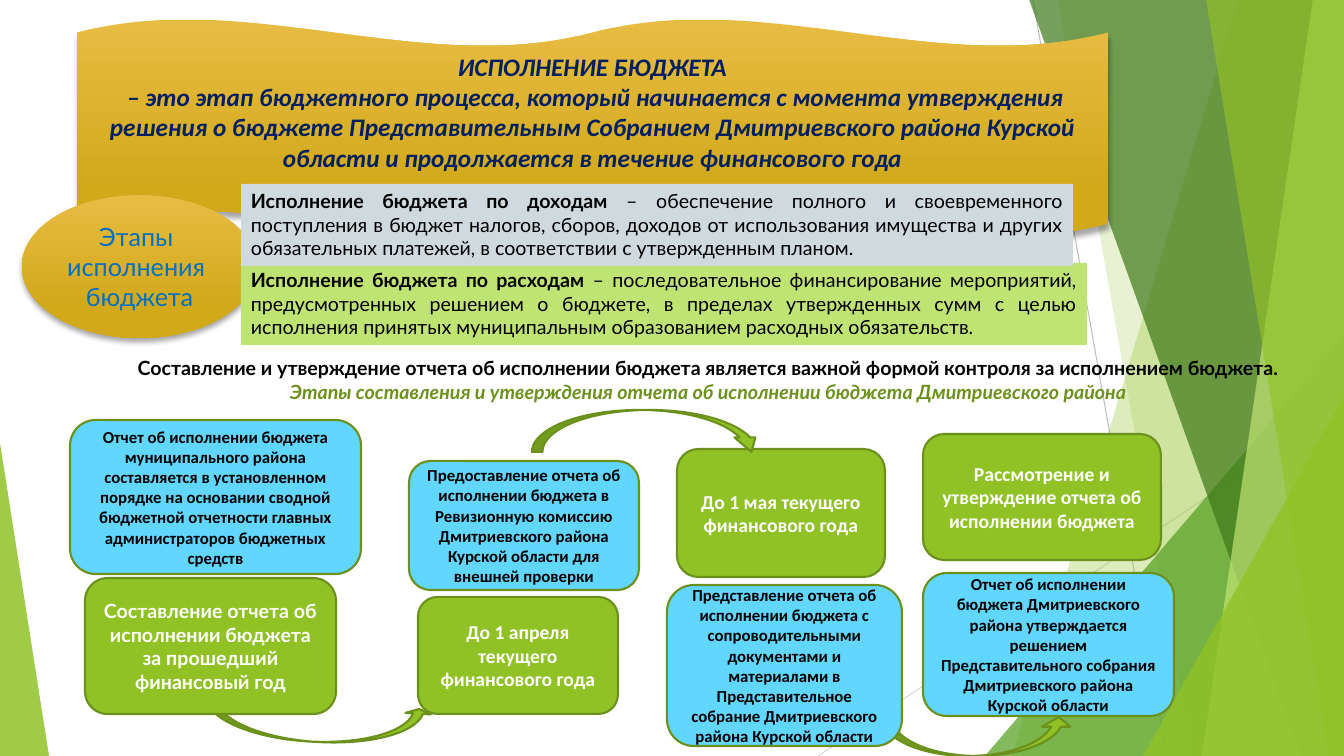
from lxml import etree
from pptx import Presentation, util as u
from pptx.dml.color import RGBColor
from pptx.enum import shapes, text
from pptx.oxml.ns import qn

PX = 9071.43  # EMU per px: 1344 px across 13.33 inches
W, H = 1344, 756
THEME = {
    "green": "90C226", "forest": "54A021", "dark": "3F7819", "lime": "C0E474",
    "edge": "6B901C", "sky": "61D6FF", "mist": "CFDADF", "gold": "E7BC43",
    "ochre": "D2A91B", "navy": "002060", "blue": "0070C0", "olive": "6C921D",
    "black": "000000", "white": "FFFFFF", "grey": "BFBFBF", "pale": "D9D9D9",
    "title": 18, "body": 14, "note": 12,
}
MSO = shapes.MSO_SHAPE
CENTER, JUSTIFY = text.PP_ALIGN.CENTER, text.PP_ALIGN.JUSTIFY
TOP, MIDDLE = text.MSO_ANCHOR.TOP, text.MSO_ANCHOR.MIDDLE


def style(sp, fill, line=None, alpha=100):
    """Plain or gold gradient fill, optional outline, opacity in percent."""
    sp.shadow.inherit = False
    if fill == "gold":
        sp.fill.gradient()
        sp.fill.gradient_angle = 270
        for stop, pos, color in zip(sp.fill.gradient_stops, (0, 0.78), ("gold", "ochre")):
            stop.position = pos
            stop.color.rgb = RGBColor.from_string(THEME[color])
    else:
        sp.fill.solid()
        sp.fill.fore_color.rgb = RGBColor.from_string(THEME[fill])
    if alpha < 100:
        clr = sp._element.spPr.find(qn("a:solidFill"))[0]
        etree.SubElement(clr, qn("a:alpha"), val=str(alpha * 1000))
    if line:
        sp.line.color.rgb = RGBColor.from_string(THEME[line])
        sp.line.width = u.Pt(1.5)
    else:
        sp.line.fill.background()


def write(sp, paragraphs, size, font, align=CENTER, anchor=TOP, wrap=True):
    """Each paragraph is a list of (words, color, bold, italic) runs."""
    tf = sp.text_frame
    tf.word_wrap = wrap
    tf.vertical_anchor = anchor
    for i, runs in enumerate(paragraphs):
        p = tf.add_paragraph() if i else tf.paragraphs[0]
        p.alignment = align
        for words, color, bold, italic in runs:
            r = p.add_run()
            r.text = words
            r.font.size = u.Pt(THEME[size])
            r.font.name = font
            r.font.bold, r.font.italic = bold, italic
            r.font.color.rgb = RGBColor.from_string(THEME[color])


prs = Presentation()
prs.slide_width, prs.slide_height = round(W * PX), round(H * PX)
s = prs.slides.add_slide(prs.slide_layouts[6])

# Background facets
for x1, y1, x2, y2, color in [(1033, 0, 1167, H, "grey"), (W, 406, 818, H, "pale")]:
    ends = [round(v * PX) for v in (x1, y1, x2, y2)]
    cn = s.shapes.add_connector(shapes.MSO_CONNECTOR.STRAIGHT, *ends)
    cn.line.color.rgb = RGBColor.from_string(THEME[color])
    cn.line.width = u.Pt(0.75)
    etree.SubElement(cn._element.spPr, qn("a:effectLst"))

# A pair is the top and bottom x of a band reaching the right edge;
# a triple is left, top and width of a triangle standing on the bottom edge.
facets = [
    ((1238, 1012), "green", 30),
    ((1058, 1192), "green", 20),
    ((985, 336, 359), "forest", 72),
    ((1029, 1301), "dark", 70),
    ((1313, 1202), "lime", 70),
    ((1206, 1329), "green", 65),
    ((1143, 396, 201), "green", 80),
    ((0, 443, 49), "green", 85),
]
for place, color, alpha in facets:
    if len(place) == 2:
        top, bottom = place
        fb = s.shapes.build_freeform(top, -1, scale=PX)
        fb.add_line_segments([(W, -1), (W, H), (bottom, H)], close=True)
        sp = fb.convert_to_shape()
    else:
        x, y, w = place
        box = [round(v * PX) for v in (x, y, w, H - y)]
        sp = s.shapes.add_shape(MSO.ISOSCELES_TRIANGLE, *box)
        sp.adjustments[0] = 1 if x else 0
    style(sp, color, alpha=alpha)

# Gold banner and ellipse
banner = [
    [("ИСПОЛНЕНИЕ БЮДЖЕТА", "navy", True, True)],
    [(" – это этап бюджетного процесса, который начинается с момента утверждения "
      "решения о бюджете Представительным Собранием Дмитриевского района Курской "
      "области и продолжается в течение финансового года", "navy", True, True)],
]
stages = [[(words, "blue", False, False)] for words in ("Этапы ", "исполнения ", "бюджета")]
for kind, box, paragraphs, font, wrap in [
    (MSO.DOUBLE_WAVE, (77, 19, 1031, 236 - 19 + 1), banner, "Calibri", True),
    (MSO.OVAL, (22, 195, 235, 143), stages, "Lato", False),
]:
    sp = s.shapes.add_shape(kind, *[round(v * PX) for v in box])
    style(sp, "gold")
    effects = sp._element.spPr.find(qn("a:effectLst"))
    shadow = etree.SubElement(effects, qn("a:outerShdw"), blurRad=str(u.Pt(4)),
                              dist=str(u.Pt(3)), dir="5400000", rotWithShape="0")
    clr = etree.SubElement(shadow, qn("a:srgbClr"), val=THEME["black"])
    etree.SubElement(clr, qn("a:alpha"), val="35000")
    write(sp, paragraphs, "title", font, wrap=wrap)

# Definitions
for y, w, fill, term, meaning in [
    (263, 846, "lime", "Исполнение бюджета по расходам ",
     "– последовательное финансирование мероприятий, предусмотренных решением о бюджете, "
     "в пределах утвержденных сумм с целью исполнения принятых муниципальным образованием "
     "расходных обязательств."),
    (184, 832, "mist", "Исполнение бюджета по доходам ",
     "– обеспечение полного и своевременного поступления в бюджет налогов, сборов, доходов "
     "от использования имущества и других обязательных платежей, в соответствии с "
     "утвержденным планом."),
]:
    sp = s.shapes.add_shape(MSO.RECTANGLE, *[round(v * PX) for v in (241, y, w, 82)])
    style(sp, fill)
    write(sp, [[(term, "black", True, False), (meaning, "black", False, False)]],
          "body", "Lato", JUSTIFY)

tb = s.shapes.add_textbox(*[round(v * PX) for v in (77, 351, 1263, 90)])
write(tb, [
    [("Составление и утверждение отчета об исполнении бюджета является важной формой "
      "контроля за исполнением бюджета.", "black", True, False)],
    [("Этапы составления и утверждения отчета об исполнении бюджета Дмитриевского района",
      "olive", True, True)],
], "body", "Lato")

# Report steps: sky boxes explain, green boxes name the step or its deadline
boxes = [
    ((70, 420, 291, 154), "sky", "Calibri",
     "Отчет об исполнении бюджета муниципального района составляется в установленном "
     "порядке на основании сводной бюджетной отчетности главных администраторов "
     "бюджетных средств"),
    ((85, 578, 251, 136), "green", "Lato",
     "Составление отчета об исполнении бюджета за прошедший финансовый год"),
    ((409, 461, 230, 129), "sky", "Calibri",
     "Предоставление отчета об исполнении бюджета в Ревизионную комиссию Дмитриевского "
     "района Курской области для внешней проверки"),
    ((418, 597, 200, 117), "green", "Calibri", "До 1 апреля текущего финансового года"),
    ((677, 449, 208, 128), "green", "Calibri", "До 1 мая текущего финансового года"),
    ((667, 585, 235, 161), "sky", "Calibri",
     "Представление отчета об исполнении бюджета с сопроводительными документами и "
     "материалами в Представительное собрание Дмитриевского района Курской области"),
    ((923, 434, 238, 126), "green", "Calibri",
     "Рассмотрение и утверждение отчета об исполнении бюджета"),
    ((923, 573, 251, 143), "sky", "Calibri",
     "Отчет об исполнении бюджета Дмитриевского района утверждается решением "
     "Представительного собрания Дмитриевского района Курской области"),
]
arrows = [
    (MSO.CURVED_UP_ARROW, (882, 717, 191, 39), (0.25, 0.726, 0.25), 0),
    (MSO.CURVED_UP_ARROW, (205, 703, 226, 39), (0.25, 0.655, 0.123), 3.4),
    (MSO.CURVED_DOWN_ARROW, (532, 410, 230, 42), (0.25, 0.5, 0.346), 0),
]
under, over = arrows[:2], arrows[2:]
for item in under + boxes + over:
    if item in boxes:
        box, fill, font, words = item
        sp = s.shapes.add_shape(MSO.ROUNDED_RECTANGLE, *[round(v * PX) for v in box])
        style(sp, fill, "edge")
        color, size = ("black", "note") if fill == "sky" else ("white", "body")
        write(sp, [[(words, color, True, False)]], size, font, anchor=MIDDLE)
    else:
        kind, box, bends, turn = item
        sp = s.shapes.add_shape(kind, *[round(v * PX) for v in box])
        style(sp, "green", "edge")
        sp.rotation = turn
        for i, bend in enumerate(bends):
            sp.adjustments[i] = bend

prs.save("out.pptx")
